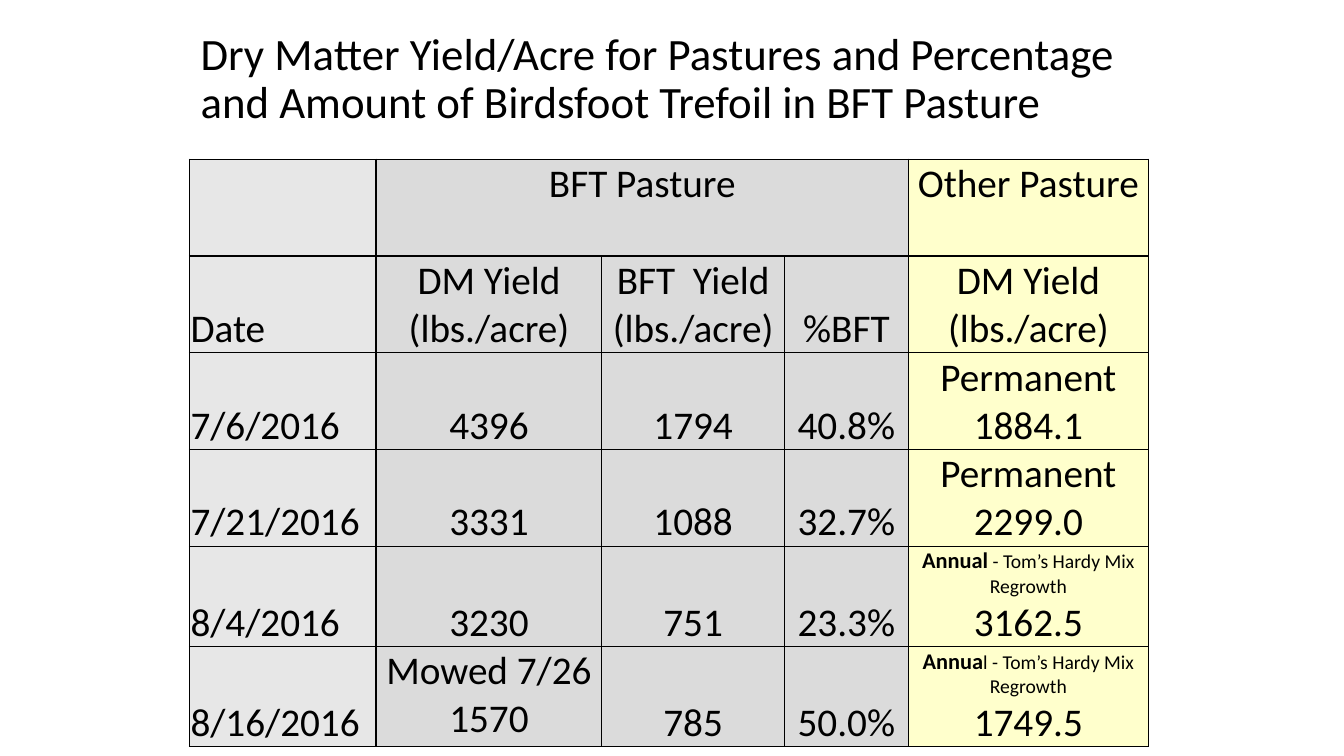
from lxml import etree
from pptx import Presentation
from pptx.dml.color import RGBColor
from pptx.enum import text
from pptx.oxml import ns
from pptx.util import Inches, Pt

BLACK = RGBColor(0x00, 0x00, 0x00)
DATE_GRAY = RGBColor(0xE7, 0xE7, 0xE7)
BFT_GRAY = RGBColor(0xDB, 0xDB, 0xDB)
OTHER_YELLOW = RGBColor(0xFF, 0xFF, 0xCC)

COLUMN_WIDTHS = [1.85, 2.24, 1.81, 1.23, 2.38]
COLUMN_FILLS = [DATE_GRAY, BFT_GRAY, BFT_GRAY, BFT_GRAY, OTHER_YELLOW]
HEADER_HEIGHT = 0.96
ROW_HEIGHT = 0.88


def annual_mix(bold_part, plain_part):
    return [(bold_part, 16, True), (plain_part + " - Tom’s Hardy Mix\nRegrowth", 14, False)]


ROWS = [
    ["", "BFT Pasture", "", "", "Other Pasture"],
    ["Date", "DM Yield (lbs./acre)", "BFT  Yield (lbs./acre)", "%BFT", "DM Yield (lbs./acre)"],
    ["7/6/2016", "4396", "1794", "40.8%", ["Permanent", "1884.1"]],
    ["7/21/2016", "3331", "1088", "32.7%", ["Permanent", "2299.0"]],
    ["8/4/2016", "3230", "751", "23.3%", [annual_mix("Annual", ""), "3162.5"]],
    ["8/16/2016", ["Mowed 7/26", "1570"], "785", "50.0%", [annual_mix("Annua", "l"), "1749.5"]],
]


def write_text(paragraph, content, size=28, align=text.PP_ALIGN.CENTER, line_spacing=None):
    paragraph.alignment = align
    paragraph.line_spacing = line_spacing
    pieces = [(content, size, False)] if isinstance(content, str) else content
    for words, points, bold in pieces:
        for index, line in enumerate(words.split("\n")):
            if index:
                paragraph.add_line_break()
            run = paragraph.add_run()
            run.text = line
            run.font.name = "Calibri"
            run.font.size = Pt(points)
            run.font.bold = bold
            run.font.color.rgb = BLACK


def add_borders(cell):
    properties = cell._tc.get_or_add_tcPr()
    for side in ("lnL", "lnR", "lnT", "lnB"):
        line = etree.SubElement(properties, ns.qn("a:" + side), w=str(Pt(1)))
        fill = etree.SubElement(line, ns.qn("a:solidFill"))
        etree.SubElement(fill, ns.qn("a:srgbClr"), val=str(BLACK))


def format_cell(cell, content, fill, align, anchor):
    add_borders(cell)
    cell.fill.solid()
    cell.fill.fore_color.rgb = fill
    cell.margin_left = cell.margin_right = cell.margin_top = Inches(0.01)
    cell.margin_bottom = 0
    cell.vertical_anchor = anchor
    if not content:
        return
    lines = [content] if isinstance(content, str) else content
    for index, line in enumerate(lines):
        paragraph = cell.text_frame.add_paragraph() if index else cell.text_frame.paragraphs[0]
        write_text(paragraph, line, align=align)


def add_title(slide, left, top, width, height):
    title = slide.shapes.title
    title.left, title.top = Inches(left), Inches(top)
    title.width, title.height = Inches(width), Inches(height)
    frame = title.text_frame
    frame.auto_size = text.MSO_AUTO_SIZE.NONE
    frame.vertical_anchor = text.MSO_ANCHOR.MIDDLE
    write_text(
        frame.paragraphs[0],
        "Dry Matter Yield/Acre for Pastures and Percentage and Amount of Birdsfoot Trefoil in BFT Pasture",
        size=32, align=text.PP_ALIGN.LEFT, line_spacing=0.9,
    )


def add_yield_table(slide, left, top):
    heights = [HEADER_HEIGHT] + [ROW_HEIGHT] * (len(ROWS) - 1)
    table = slide.shapes.add_table(
        len(ROWS), len(COLUMN_WIDTHS), Inches(left), Inches(top),
        Inches(sum(COLUMN_WIDTHS)), Inches(sum(heights)),
    ).table
    table.first_row = table.horz_banding = False
    for column, width in zip(table.columns, COLUMN_WIDTHS):
        column.width = Inches(width)
    for row_index, (row, height) in enumerate(zip(ROWS, heights)):
        table.rows[row_index].height = Inches(height)
        for column_index, (content, fill) in enumerate(zip(row, COLUMN_FILLS)):
            align = text.PP_ALIGN.CENTER if column_index else text.PP_ALIGN.LEFT
            at_top = row_index == 0 or isinstance(content, list)
            anchor = text.MSO_ANCHOR.TOP if at_top else text.MSO_ANCHOR.BOTTOM
            format_cell(table.cell(row_index, column_index), content, fill, align, anchor)
    table.cell(0, 1).merge(table.cell(0, 3))


def main():
    presentation = Presentation()
    presentation.slide_width = Inches(13.33)
    presentation.slide_height = Inches(7.5)
    slide = presentation.slides.add_slide(presentation.slide_layouts[5])
    add_title(slide, 1.89, 0.17, 9.5, 1.25)
    add_yield_table(slide, 1.88, 1.58)
    presentation.save("out.pptx")


if __name__ == "__main__":
    main()
